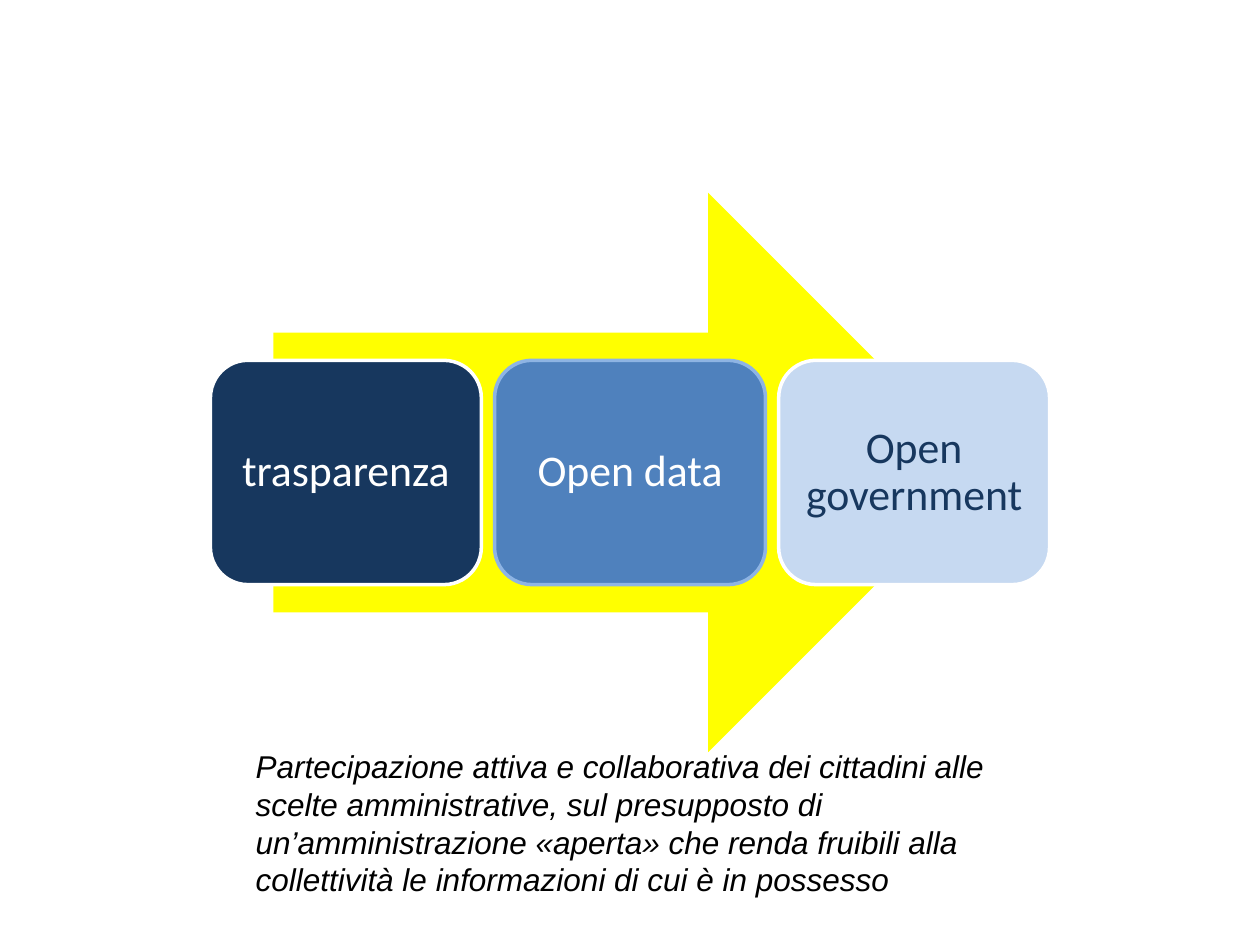
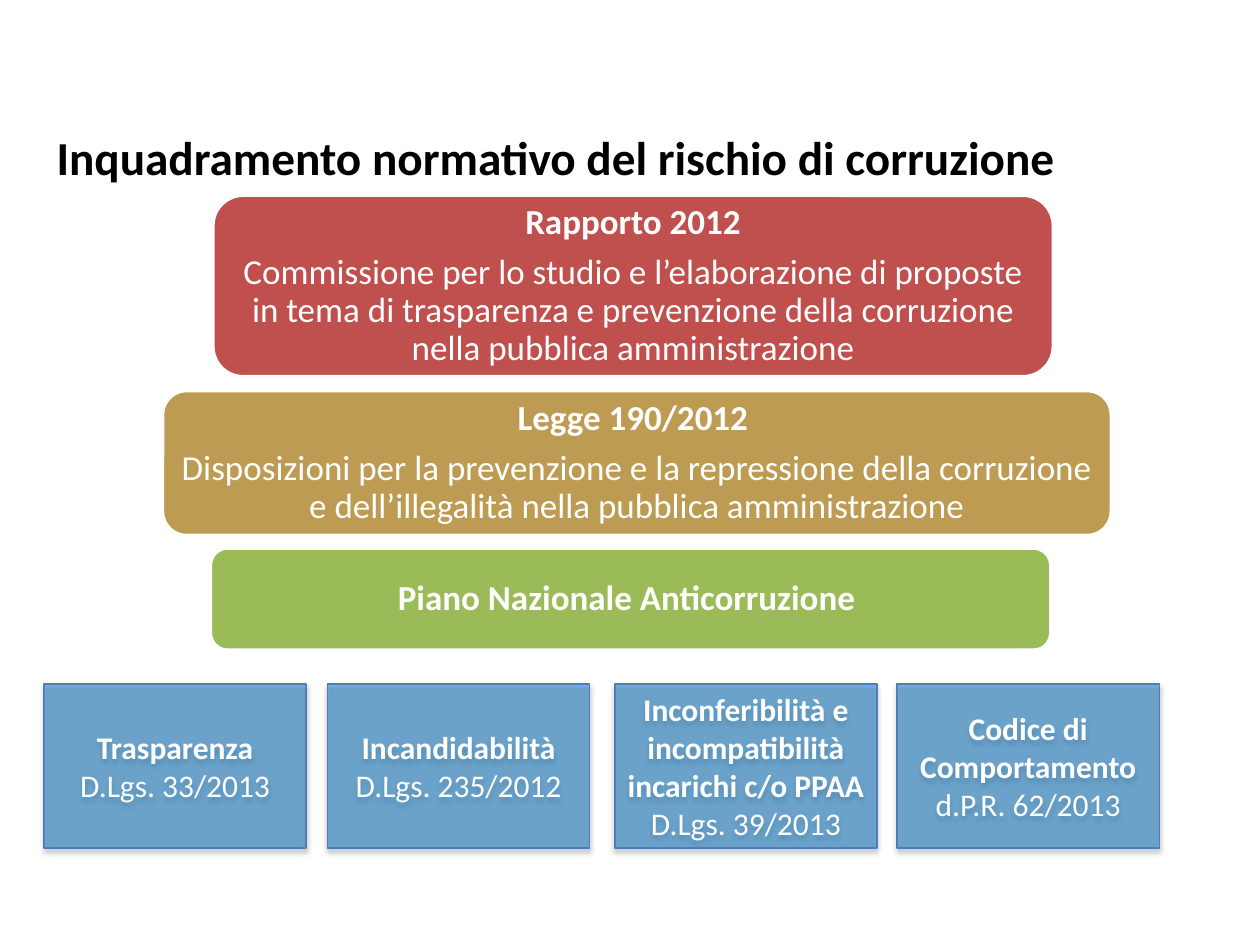
from dataclasses import dataclass

from lxml import etree
from pptx import Presentation
from pptx.dml.color import RGBColor
from pptx.enum.shapes import MSO_SHAPE
from pptx.enum.text import MSO_ANCHOR, PP_ALIGN
from pptx.oxml.ns import qn
from pptx.util import Inches, Pt

ARROW = MSO_SHAPE.RIGHT_ARROW
ROUND = MSO_SHAPE.ROUNDED_RECTANGLE
RECT = MSO_SHAPE.RECTANGLE
MIDDLE = MSO_ANCHOR.MIDDLE
TOP = MSO_ANCHOR.TOP
CENTER = PP_ALIGN.CENTER
LEFT = PP_ALIGN.LEFT
COLS, ROWS = 100, 75


@dataclass(frozen=True)
class Theme:
    white: str = "FFFFFF"
    black: str = "000000"
    yellow: str = "FFFF00"
    navy: str = "17375E"
    blue: str = "4F81BD"
    sky: str = "8EB4E3"
    pale: str = "C6D9F1"
    red: str = "C0504D"
    gold: str = "BD9B53"
    green: str = "9BBB59"
    glass: str = "0070C0"
    edge: str = "4B7EBC"
    head: int = 27
    step: int = 25
    bar: int = 20
    body: int = 18
    font: str = "Calibri"
    plain: str = "Arial"


def put(target, values):
    for name, value in values.items():
        setattr(target, name, value)


class Deck:
    """Holds the theme and the slide being drawn; places are in grid units."""

    def __init__(self, theme):
        self.theme = theme
        self.show = Presentation()
        put(self.show, {"slide_width": Inches(10), "slide_height": Inches(7.5)})
        self.slide = None

    def new(self):
        self.slide = self.show.slides.add_slide(self.show.slide_layouts[6])

    def area(self, left, top, width, height):
        col = self.show.slide_width / COLS
        row = self.show.slide_height / ROWS
        return [round(n) for n in (left * col, top * row, width * col, height * row)]

    def label(self, shape, lines, size, color, align=CENTER, anchor=MIDDLE,
              inset=None, face=None, slant=None, **spacing):
        """Fill a shape with (text, bold) lines."""
        frame = shape.text_frame
        put(frame, {"word_wrap": True, "vertical_anchor": anchor})
        if inset:
            sides = ("left", "top", "right", "bottom")
            put(frame, {f"margin_{side}": Inches(inset) for side in sides})
        for i, (words, bold) in enumerate(lines):
            para = frame.add_paragraph() if i else frame.paragraphs[0]
            put(para, {"alignment": align, **spacing})
            run = para.add_run()
            run.text = words
            put(run.font, {"size": Pt(size), "name": face or self.theme.font,
                           "bold": bold, "italic": slant})
            run.font.color.rgb = RGBColor.from_string(color)

    def text(self, place, lines, size, **style):
        box = self.slide.shapes.add_textbox(*self.area(*place))
        self.label(box, lines, size, self.theme.black, LEFT, TOP, **style)

    def shape(self, kind, place, fill, line=None, width=2):
        item = self.slide.shapes.add_shape(kind, *self.area(*place))
        item.shadow.inherit = False
        item.fill.solid()
        item.fill.fore_color.rgb = RGBColor.from_string(fill)
        if line:
            item.line.color.rgb = RGBColor.from_string(line)
            item.line.width = Pt(width)
        else:
            item.line.fill.background()
        return item

    def block(self, place, lines, size, fill, line, color, inset):
        """Rounded box with tight, centred lines."""
        item = self.shape(ROUND, place, fill, line)
        self.label(item, lines, size, color, inset=inset,
                   line_spacing=0.9, space_after=Pt(0.35 * size))

    def card(self, place, lines):
        """See-through box with a soft shadow below it."""
        look = self.theme
        item = self.shape(RECT, place, look.glass, look.edge, 0.75)
        props = item._element.spPr
        tint = props.find(qn("a:solidFill")).find(qn("a:srgbClr"))
        etree.SubElement(tint, qn("a:alpha"), val="49000")
        shade = etree.SubElement(
            props.find(qn("a:effectLst")), qn("a:outerShdw"),
            blurRad=str(Pt(3.1)), dist=str(Pt(1.8)), dir="5400000", rotWithShape="0")
        dark = etree.SubElement(shade, qn("a:srgbClr"), val=look.black)
        etree.SubElement(dark, qn("a:alpha"), val="35000")
        self.label(item, lines, look.body, look.white)


def draw_steps(deck):
    look = deck.theme
    deck.new()
    deck.shape(ARROW, (21.7, 15.3, 56.7, 44.4), look.yellow)
    steps = [
        ("trasparenza", look.navy, look.white, look.white),
        ("Open data", look.blue, look.sky, look.white),
        ("Open government", look.pale, look.white, look.navy),
    ]
    for i, (name, fill, line, color) in enumerate(steps):
        deck.block((16.7 + 22.55 * i, 28.6, 21.5, 17.8), [(name, None)],
                   look.step, fill, line, color, 0.1)
    deck.text((19.3, 58.8, 63.8, 13.1), [(
        "Partecipazione attiva e collaborativa dei cittadini alle scelte "
        "amministrative, sul presupposto di un’amministrazione «aperta» che "
        "renda fruibili alla collettività le informazioni di cui è in possesso",
        None)], look.body, face=look.plain, slant=True)


def draw_laws(deck):
    look = deck.theme
    deck.new()
    deck.text((3.5, 9.7, 93.1, 5.6),
              [("Inquadramento normativo del rischio di corruzione", True)], look.head)
    bars = [
        ((16.9, 15.5, 66.7, 14.4), look.red, [
            ("Rapporto 2012", True),
            ("Commissione per lo studio e l’elaborazione di proposte in tema di "
             "trasparenza e prevenzione della corruzione nella pubblica "
             "amministrazione", False)]),
        ((12.9, 31, 75.3, 11.5), look.gold, [
            ("Legge 190/2012 ", True),
            ("Disposizioni per la prevenzione e la repressione della corruzione "
             "e dell’illegalità nella pubblica amministrazione", False)]),
        ((16.7, 43.5, 66.7, 8.1), look.green,
         [("Piano Nazionale Anticorruzione ", True)]),
    ]
    for place, fill, lines in bars:
        deck.block(place, lines, look.bar, fill, look.white, look.white, 0.08)
    cards = [
        (3.5, "Trasparenza", "D.Lgs. 33/2013"),
        (26, "Incandidabilità", "D.Lgs. 235/2012"),
        (48.8, "Inconferibilità e incompatibilità incarichi c/o PPAA",
         "D.Lgs. 39/2013"),
        (71.2, "Codice di Comportamento", "d.P.R. 62/2013"),
    ]
    for left, name, law in cards:
        deck.card((left, 54.3, 20.8, 13), [(name, True), (law, False)])


def main():
    deck = Deck(Theme())
    draw_steps(deck)
    draw_laws(deck)
    deck.show.save("out.pptx")


if __name__ == "__main__":
    main()
